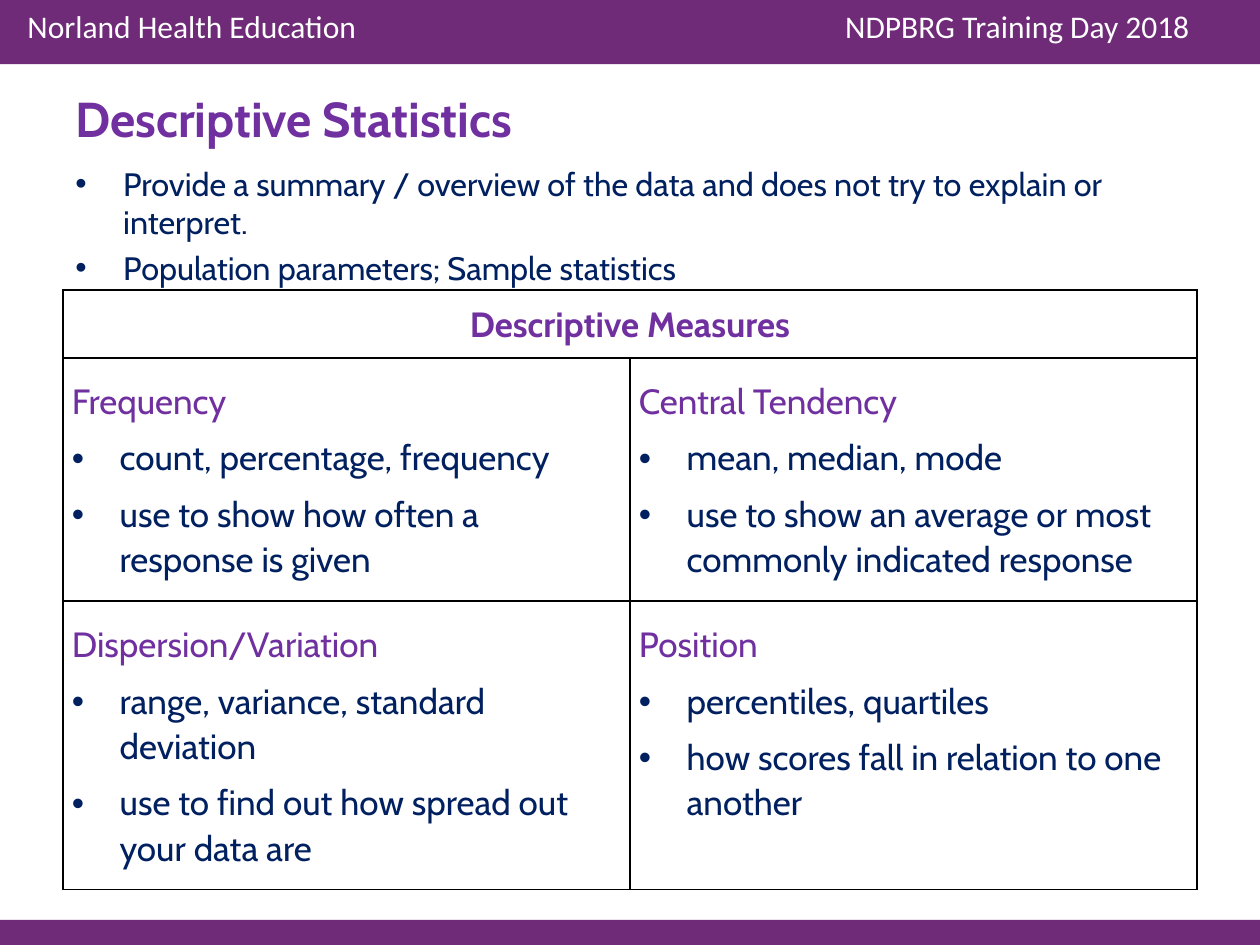
from lxml.etree import SubElement
from pptx import Presentation
from pptx.dml.color import RGBColor
from pptx.enum.shapes import MSO_SHAPE
from pptx.enum.text import MSO_ANCHOR, PP_ALIGN
from pptx.oxml.ns import qn
from pptx.util import Inches, Pt

COLORS = {"band": "6F2A78", "heading": "7030A0", "body": "002060",
          "white": "FFFFFF", "border": "000000"}
INDENT = Inches(0.38)


def write(paragraph, text, size, color, font="Cabin", bold=False, bullet=False):
    paragraph.text = text
    paragraph.font.size = Pt(size)
    paragraph.font.name = font
    paragraph.font.bold = bold
    paragraph.font.color.rgb = RGBColor.from_string(COLORS[color])
    if bullet:
        properties = paragraph._p.get_or_add_pPr()
        properties.set("marL", str(INDENT))
        properties.set("indent", str(-INDENT))
        SubElement(properties, qn("a:buFont")).set("typeface", "Arial")
        SubElement(properties, qn("a:buChar")).set("char", "•")
        # The default run properties must come after the bullet.
        properties.append(properties.find(qn("a:defRPr")))


def format_cell(cell, vertical_margin):
    """Give the cell its margins, black borders and no fill."""
    cell.margin_left = cell.margin_right = Inches(0.07)
    cell.margin_top = cell.margin_bottom = Inches(vertical_margin)
    properties = cell._tc.get_or_add_tcPr()
    for side in ("lnL", "lnR", "lnT", "lnB"):
        line = SubElement(properties, qn(f"a:{side}"), w=str(Pt(1)))
        fill = SubElement(line, qn("a:solidFill"))
        SubElement(fill, qn("a:srgbClr"), val=COLORS["border"])
    cell.fill.background()


presentation = Presentation()
presentation.slide_width = Inches(10)
presentation.slide_height = Inches(7.5)
slide = presentation.slides.add_slide(presentation.slide_layouts[6])

# Header and footer bands
for top, height in ((0, 0.51), (7.3, 0.28)):
    band = slide.shapes.add_shape(
        MSO_SHAPE.RECTANGLE, 0, Inches(top), Inches(10), Inches(height))
    band.shadow.inherit = False
    band.fill.solid()
    band.fill.fore_color.rgb = RGBColor.from_string(COLORS["band"])
    band.line.fill.background()

# Header, bullets and title
text_boxes = [
    ((0.12, 0.01, 5, 0.4), ["Norland Health Education"], (18, "white", "Calibri")),
    ((6.61, 0.01, 3.28, 0.4), ["NDPBRG Training Day 2018"], (18, "white", "Calibri")),
    ((0.5, 1.25, 9, 1.04),
     ["Provide a summary / overview of the data and does not try to explain or interpret.",
      "Population parameters; Sample statistics"],
     (18.5, "body", "Cabin", False, True)),
    ((0.5, 0.65, 8.74, 0.76), ["Descriptive Statistics"], (28, "heading", "Cabin", True)),
]
for box, lines, style in text_boxes:
    frame = slide.shapes.add_textbox(*map(Inches, box)).text_frame
    frame.word_wrap = True
    for index, line in enumerate(lines):
        paragraph = frame.add_paragraph() if index else frame.paragraphs[0]
        write(paragraph, line, *style)
        if index:
            paragraph.space_before = Pt(3.7)

# Table of measures
measures = [
    [("Frequency", "count, percentage, frequency",
      "use to show how often a response is given"),
     ("Central Tendency", "mean, median, mode",
      "use to show an average or most commonly indicated response")],
    [("Dispersion/Variation", "range, variance, standard deviation",
      "use to find out how spread out your data are"),
     ("Position", "percentiles, quartiles",
      "how scores fall in relation to one another")],
]
row_heights = (0.54, 1.93, 2.29)
table = slide.shapes.add_table(
    3, 2, Inches(0.5), Inches(2.3), Inches(9), Inches(sum(row_heights))).table
table.first_row = False
table.horz_banding = False
for row, height in zip(table.rows, row_heights):
    row.height = Inches(height)

for column in range(2):
    format_cell(table.cell(0, column), 0)
heading_cell = table.cell(0, 0)
heading_cell.merge(table.cell(0, 1))
heading_cell.vertical_anchor = MSO_ANCHOR.MIDDLE
heading = heading_cell.text_frame.paragraphs[0]
write(heading, "Descriptive Measures", 20, "heading", bold=True)
heading.alignment = PP_ALIGN.CENTER
heading.line_spacing = 1.07

for row_index, row_measures in enumerate(measures, start=1):
    for column, lines in enumerate(row_measures):
        cell = table.cell(row_index, column)
        format_cell(cell, 0.16)
        frame = cell.text_frame
        for index, line in enumerate(lines):
            paragraph = frame.add_paragraph() if index else frame.paragraphs[0]
            write(paragraph, line, 20, "body" if index else "heading", bullet=index > 0)
            paragraph.line_spacing = 1.07
            if index < len(lines) - 1:
                paragraph.space_after = Pt(6)

presentation.save("out.pptx")
